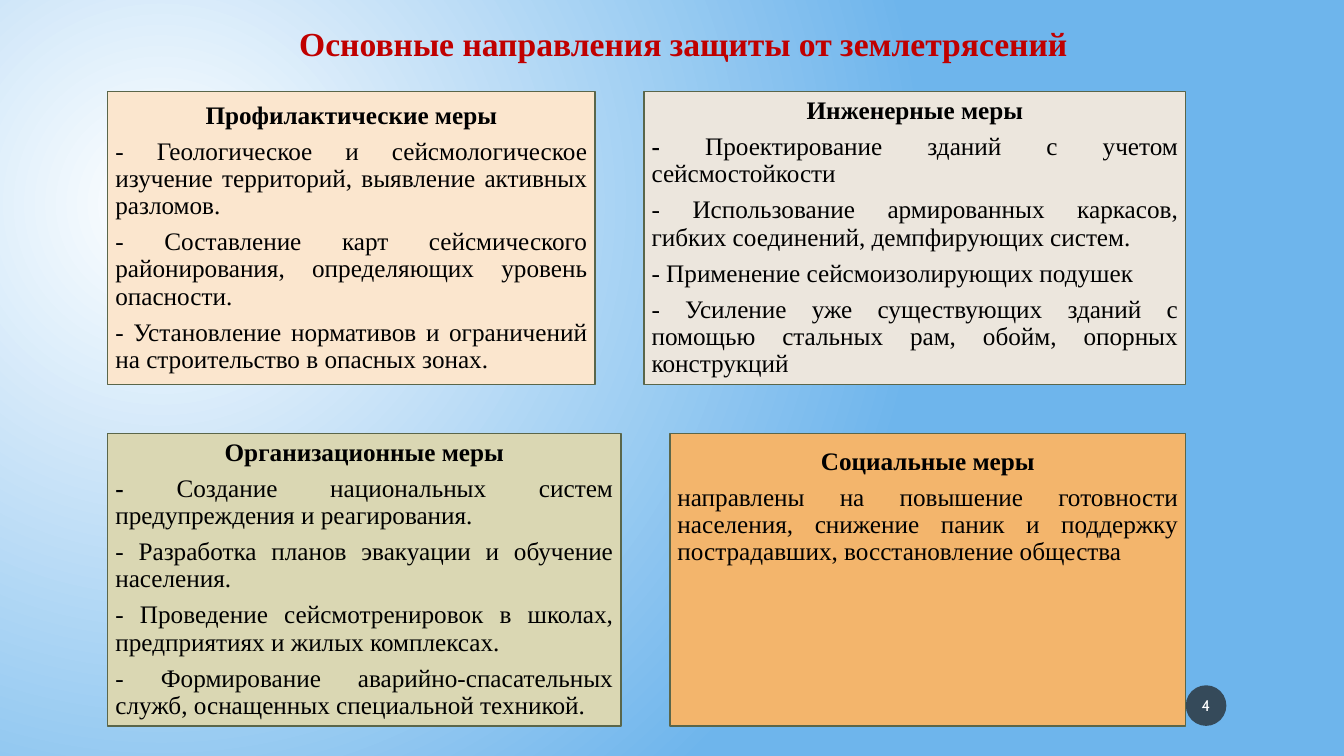
from lxml import etree
from pptx import Presentation
from pptx.dml import color
from pptx.enum import shapes, text
from pptx.oxml import ns
from pptx.util import Pt

SERIF = "Times New Roman"
LEFT, TOP, WIDTH, HEIGHT, GAP = 77, 65.5, 770, 209, 35

# Each row: width of its left card, then cards as (fill, heading, items).
# An item is (bold lead, plain text).
ROWS = [
    (348, [
        ("FBE6CE", "Профилактические меры", [
            ("", "- Геологическое и сейсмологическое изучение территорий, выявление активных разломов."),
            ("", "- Составление карт сейсмического районирования, определяющих уровень опасности."),
            ("", "- Установление нормативов и ограничений на строительство в опасных зонах."),
        ]),
        ("ECE6DD", "Инженерные меры", [
            ("- ", "Проектирование зданий с учетом сейсмостойкости"),
            ("", "- Использование армированных каркасов, гибких соединений, демпфирующих систем."),
            ("", "- Применение сейсмоизолирующих подушек"),
            ("", "- Усиление уже существующих зданий с помощью стальных рам, обойм, опорных конструкций"),
        ]),
    ]),
    (366.5, [
        ("DAD7B3", "Организационные меры", [
            ("- ", "Создание национальных систем предупреждения и реагирования."),
            ("", "- Разработка планов эвакуации и обучение населения."),
            ("", "- Проведение сейсмотренировок в школах, предприятиях и жилых комплексах."),
            ("", "- Формирование аварийно-спасательных служб, оснащенных специальной техникой."),
        ]),
        ("F3B56C", "Социальные меры", [
            ("", "направлены на повышение готовности населения, снижение паник и "
                 "поддержку пострадавших, восстановление общества"),
        ]),
    ]),
]


def rgb(value):
    return color.RGBColor.from_string(value)


def add_span(para, words, size, ink, bold=False, font=SERIF):
    span = para.add_run()
    span.text = words
    span.font.name, span.font.size, span.font.bold = font, Pt(size), bold
    span.font.color.rgb = rgb(ink)


def set_margins(frame, left, top, right, bottom):
    frame.margin_left, frame.margin_top = Pt(left), Pt(top)
    frame.margin_right, frame.margin_bottom = Pt(right), Pt(bottom)


def paint_background(page):
    """Radial glow centred in the upper left."""
    fill = page.background.fill
    fill.gradient()
    for stop, value in zip(fill.gradient_stops, ("FFFFFF", "6EB5EC")):
        stop.color.rgb = rgb(value)
    gradient = page.element.find(".//" + ns.qn("a:gradFill"))
    linear = gradient.find(ns.qn("a:lin"))
    radial = etree.Element(ns.qn("a:path"))
    radial.set("path", "circle")
    focus = etree.SubElement(radial, ns.qn("a:fillToRect"))
    for side, share in zip("ltrb", (50, 55, 125, 100)):
        focus.set(side, str(share * 1000))
    gradient.replace(linear, radial)


def set_title(page, left, top, width, height):
    title = page.shapes.title
    title.left, title.top, title.width, title.height = map(Pt, (left, top, width, height))
    frame = title.text_frame
    frame.word_wrap = True
    frame.auto_size = text.MSO_AUTO_SIZE.NONE
    frame.vertical_anchor = text.MSO_ANCHOR.TOP
    para = frame.paragraphs[0]
    para.alignment = text.PP_ALIGN.LEFT
    add_span(para, "Основные направления защиты от землетрясений", 24, "C00000", True)


def add_number(page, left, top, side):
    badge = page.shapes.add_shape(shapes.MSO_SHAPE.OVAL, *map(Pt, (left, top, side, side)))
    badge.shadow.inherit = False
    badge.line.fill.background()
    badge.fill.solid()
    badge.fill.fore_color.rgb = rgb("1D1D1D")
    tone = badge.element.spPr.find(".//" + ns.qn("a:srgbClr"))
    etree.SubElement(tone, ns.qn("a:alpha")).set("val", "70000")
    frame = badge.text_frame
    set_margins(frame, 1.5, 3.5, 1.5, 3.5)
    frame.vertical_anchor = text.MSO_ANCHOR.MIDDLE
    para = frame.paragraphs[0]
    para.alignment = text.PP_ALIGN.CENTER
    add_span(para, "4", 11, "FFFFFF", font="Cabin")


def add_card(page, left, top, width, height, fill, heading, items):
    card = page.shapes.add_shape(shapes.MSO_SHAPE.RECTANGLE, *map(Pt, (left, top, width, height)))
    card.shadow.inherit = False
    card.fill.solid()
    card.fill.fore_color.rgb = rgb(fill)
    card.line.color.rgb = rgb("5A664A")
    card.line.width = Pt(1)
    frame = card.text_frame
    frame.word_wrap = True
    # A card with a single item hangs its text from the top
    short = len(items) == 1
    frame.vertical_anchor = text.MSO_ANCHOR.TOP if short else text.MSO_ANCHOR.MIDDLE
    set_margins(frame, 5.4, 11 if short else 5.4, 5.4, 5.4)
    for index, (lead, body) in enumerate([(heading, "")] + items):
        para = frame.add_paragraph() if index else frame.paragraphs[0]
        para.alignment = text.PP_ALIGN.JUSTIFY if index else text.PP_ALIGN.CENTER
        para.line_spacing = 0.9
        para.space_after = Pt(6.3 if index < len(items) else 0)
        for words, bold in ((lead, True), (body, False)):
            if words:
                add_span(para, words, 18, "000000", bold)


def add_cards(page, left, top, width, height, gap):
    for row, (first, cards) in enumerate(ROWS):
        y = top + row * (height + gap)
        spans = ((left, first), (left + first + gap, width - first - gap))
        for (x, card_width), card in zip(spans, cards):
            add_card(page, x, y, card_width, height, *card)


def main():
    deck = Presentation()
    deck.slide_width, deck.slide_height = Pt(960), Pt(540)
    page = deck.slides.add_slide(deck.slide_layouts[5])
    paint_background(page)
    add_number(page, 847, 489.5, 29)
    set_title(page, 206.5, 13, 569, 36)
    add_cards(page, LEFT, TOP, WIDTH, HEIGHT, GAP)
    deck.save("out.pptx")


if __name__ == "__main__":
    main()
